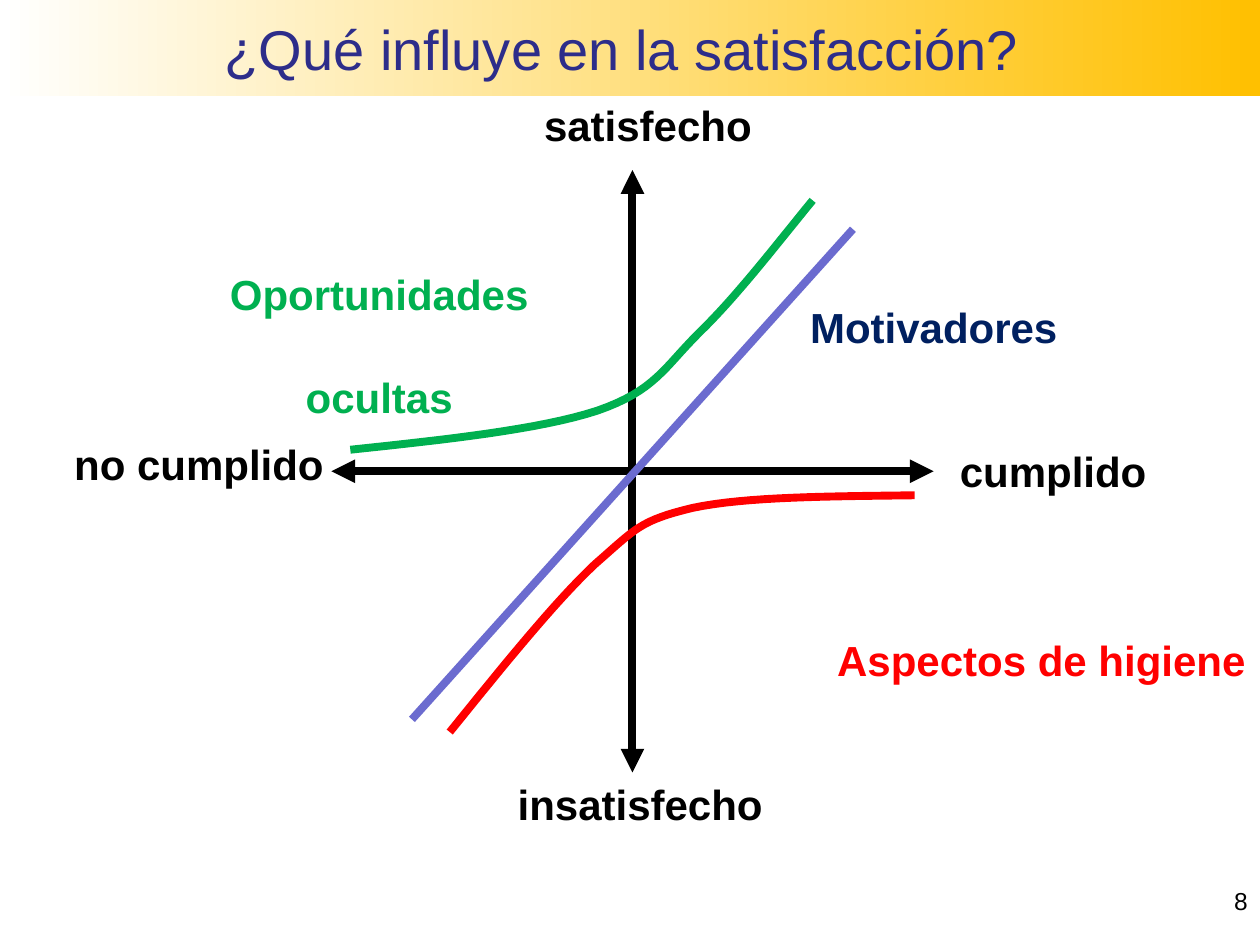
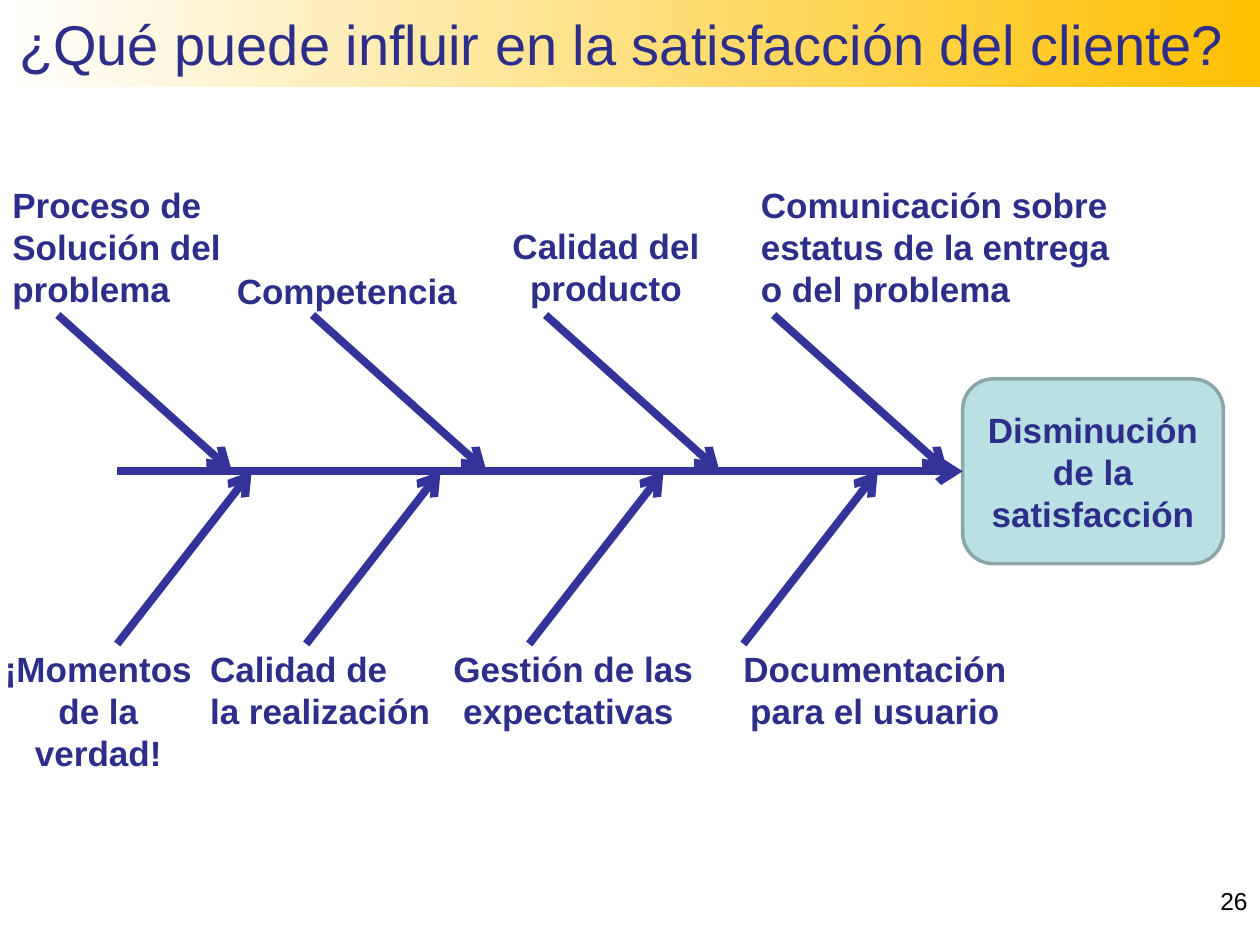
from lxml.etree import SubElement
from pptx import Presentation
from pptx.dml.color import RGBColor
from pptx.enum.shapes import MSO_CONNECTOR as Link, MSO_SHAPE as Form
from pptx.enum.text import MSO_ANCHOR as Anchor, MSO_AUTO_SIZE as Fit, PP_ALIGN as Align
from pptx.oxml.ns import qn
from pptx.util import Pt

WHITE = RGBColor(0xFF, 0xFF, 0xFF)
BLACK = RGBColor(0, 0, 0)
GOLD = RGBColor(0xFF, 0xC0, 0x00)
INDIGO = RGBColor(0x2D, 0x2D, 0x8A)
BONE = RGBColor(0x33, 0x33, 0x99)
LILAC = RGBColor(0x6B, 0x6B, 0xCF)
GREEN = RGBColor(0x00, 0xB0, 0x50)
RED = RGBColor(0xFF, 0x00, 0x00)
NAVY = RGBColor(0x00, 0x20, 0x60)
AQUA = RGBColor(0xBB, 0xE0, 0xE3)
AQUA_EDGE = RGBColor(0x8A, 0xA6, 0xA8)

WIDTH, HEIGHT = 720, 540
STROKE = 4.5
CURVE_STEPS = 16


def bezier(start, first, second, end, t):
    u = 1 - t
    return tuple(
        u**3 * a + 3 * u**2 * t * b + 3 * u * t**2 * c + t**3 * d
        for a, b, c, d in zip(start, first, second, end)
    )


class Deck:
    def __init__(self):
        self.presentation = Presentation()
        self.presentation.slide_width = Pt(WIDTH)
        self.presentation.slide_height = Pt(HEIGHT)
        self.shapes = None

    def new_slide(self, title, band_height, number):
        blank = self.presentation.slide_layouts[6]
        self.shapes = self.presentation.slides.add_slide(blank).shapes
        band = self.block(Form.RECTANGLE, 0, 0, WIDTH, band_height)
        band.line.fill.background()
        band.fill.gradient()
        band.fill.gradient_angle = 0
        for stop, color, position in zip(band.fill.gradient_stops, (WHITE, GOLD), (0, 1)):
            stop.color.rgb = color
            stop.position = position
        self.fill_text(band.text_frame, title, 32, INDIGO, Align.CENTER, bold=False)
        footer = self.shapes.add_textbox(Pt(552), Pt(502.5), Pt(168), Pt(37.5))
        footer.text_frame.word_wrap = True
        self.fill_text(footer.text_frame, number, 14, BLACK, Align.RIGHT, bold=False)

    def fill_text(self, frame, text, size, color, align, bold=True):
        frame.text = text
        font_format = {"name": "Arial", "size": Pt(size), "bold": bold}
        for paragraph in frame.paragraphs:
            paragraph.alignment = align
            for run in paragraph.runs:
                for attribute, value in font_format.items():
                    setattr(run.font, attribute, value)
                run.font.color.rgb = color

    def block(self, form, x, y, width, height):
        block = self.shapes.add_shape(form, Pt(x), Pt(y), Pt(width), Pt(height))
        block.shadow.inherit = False
        block.text_frame.vertical_anchor = Anchor.MIDDLE
        block.text_frame.word_wrap = True
        return block

    def label(self, text, x, y, width, height, size, color,
              align=Align.LEFT, wrap=False, gap=0):
        box = self.shapes.add_textbox(Pt(x), Pt(y), Pt(width), Pt(height))
        frame_format = {"word_wrap": wrap, "auto_size": Fit.SHAPE_TO_FIT_TEXT}
        for attribute, value in frame_format.items():
            setattr(box.text_frame, attribute, value)
        self.fill_text(box.text_frame, text, size, color, align)
        for paragraph in box.text_frame.paragraphs[1:]:
            paragraph.space_before = Pt(gap)

    def stroke(self, line, color):
        line.color.rgb = color
        line.width = Pt(STROKE)

    def line(self, start, end, color, head=None, tail=None):
        line = self.shapes.add_connector(Link.STRAIGHT, *map(Pt, (*start, *end)))
        self.stroke(line.line, color)
        properties = line._element.spPr
        outline = properties.find(qn("a:ln"))
        for tag, kind in (("a:headEnd", head), ("a:tailEnd", tail)):
            if kind:
                SubElement(outline, qn(tag), type=kind)
        SubElement(properties, qn("a:effectLst"))
        return line

    def curve(self, start, segments, color):
        builder = self.shapes.build_freeform(*map(Pt, start))
        for first, second, end in segments:
            points = [bezier(start, first, second, end, step / CURVE_STEPS)
                      for step in range(1, CURVE_STEPS + 1)]
            builder.add_line_segments([(Pt(x), Pt(y)) for x, y in points], close=False)
            start = end
        curve = builder.convert_to_shape()
        curve.shadow.inherit = False
        curve.fill.background()
        self.stroke(curve.line, color)


def satisfaction_axes(deck):
    deck.new_slide("¿Qué influye en la satisfacción? ", 54.7, "8")
    for start, end in (((361.4, 97.2), (361.4, 441.4)), ((533.5, 269.3), (189.4, 269.3))):
        deck.line(start, end, BLACK, head="triangle", tail="triangle")
    for text, x, y, width, wrap in (
        ("satisfecho", 303.8, 53.3, 133.2, False),
        ("insatisfecho", 288.7, 441.4, 154.8, False),
        ("no cumplido", 35.3, 247, 176.4, True),
        ("cumplido", 541.4, 251.3, 122.4, False),
    ):
        deck.label(text, x, y, width, 36, 24, BLACK, wrap=wrap)
    deck.line((487.4, 131), (235.4, 411.1), LILAC)
    deck.curve((464.4, 114.5), (
        ((442.1, 141.8), (420.5, 169.9), (399.6, 190.1)),
        ((379.4, 210.2), (374.4, 223.2), (341.3, 234.7)),
        ((308.2, 245.5), (254.2, 251.3), (200.2, 257)),
    ), GREEN)
    deck.curve((257, 418.3), (
        ((287.3, 380.9), (316.8, 344.2), (339.8, 322.6)),
        ((363.6, 301.7), (365.8, 297.4), (396, 290.2)),
        ((426.2, 283.7), (474.5, 283.7), (522.7, 283)),
    ), RED)
    deck.label("Oportunidades\nocultas", 121.7, 149.8, 190, 92, 24, GREEN,
               Align.CENTER, wrap=True, gap=30)
    deck.label("Motivadores", 455.8, 168.5, 155.5, 36, 24, NAVY, Align.CENTER)
    deck.label("Aspectos de higiene", 470.2, 359.3, 249.8, 36.7, 24, RED, Align.CENTER)


def cause_fishbone(deck):
    deck.new_slide("¿Qué puede influir en la satisfacción del cliente? ", 49.7, "26")
    spine_y = 269.3
    effect = deck.block(Form.ROUNDED_RECTANGLE, 550.1, 216.5, 149, 105.6)
    effect.fill.solid()
    effect.fill.fore_color.rgb = AQUA
    effect.line.color.rgb = AQUA_EDGE
    effect.line.width = Pt(2)
    deck.fill_text(effect.text_frame, "Disminución \nde la satisfacción",
                   20, INDIGO, Align.CENTER)
    spine = deck.line((67, spine_y), (550.1, spine_y), BONE, tail="arrow")
    spine.end_connect(effect, 1)

    for starts, y, run in (
        ((442.1, 311.8, 178.6, 33.1), 180, 99.4),
        ((424.8, 302.4, 175, 67), 368, 76.8),
    ):
        for x in starts:
            deck.line((x, y), (x + run, spine_y), BONE, tail="arrow")

    for text, x, y, width, height, align, wrap in (
        ("Calidad del producto", 281.5, 124.6, 129.6, 55.4, Align.CENTER, True),
        ("Calidad de\nla realización", 113, 366.5, 141.1, 55.4, Align.LEFT, False),
        ("Comunicación sobre estatus de la entrega\no del problema",
         427.7, 101.5, 236.9, 79.9, Align.LEFT, True),
        ("Proceso de\nSolución del\nproblema", 0, 101.5, 134.6, 79.9, Align.LEFT, False),
        ("Documentación\npara el usuario", 414.7, 366.5, 170.6, 55.4, Align.CENTER, False),
        ("Gestión de las\n expectativas", 252, 366.5, 154.8, 55.4, Align.LEFT, True),
        ("Competencia", 128.2, 150.5, 140.4, 31, Align.LEFT, False),
        ("¡Momentos \nde la\vverdad!", -5, 366.5, 122.4, 79.9, Align.CENTER, False),
    ):
        deck.label(text, x, y, width, height, 20, INDIGO, align, wrap)


def main():
    deck = Deck()
    satisfaction_axes(deck)
    cause_fishbone(deck)
    deck.presentation.save("out.pptx")


if __name__ == "__main__":
    main()
